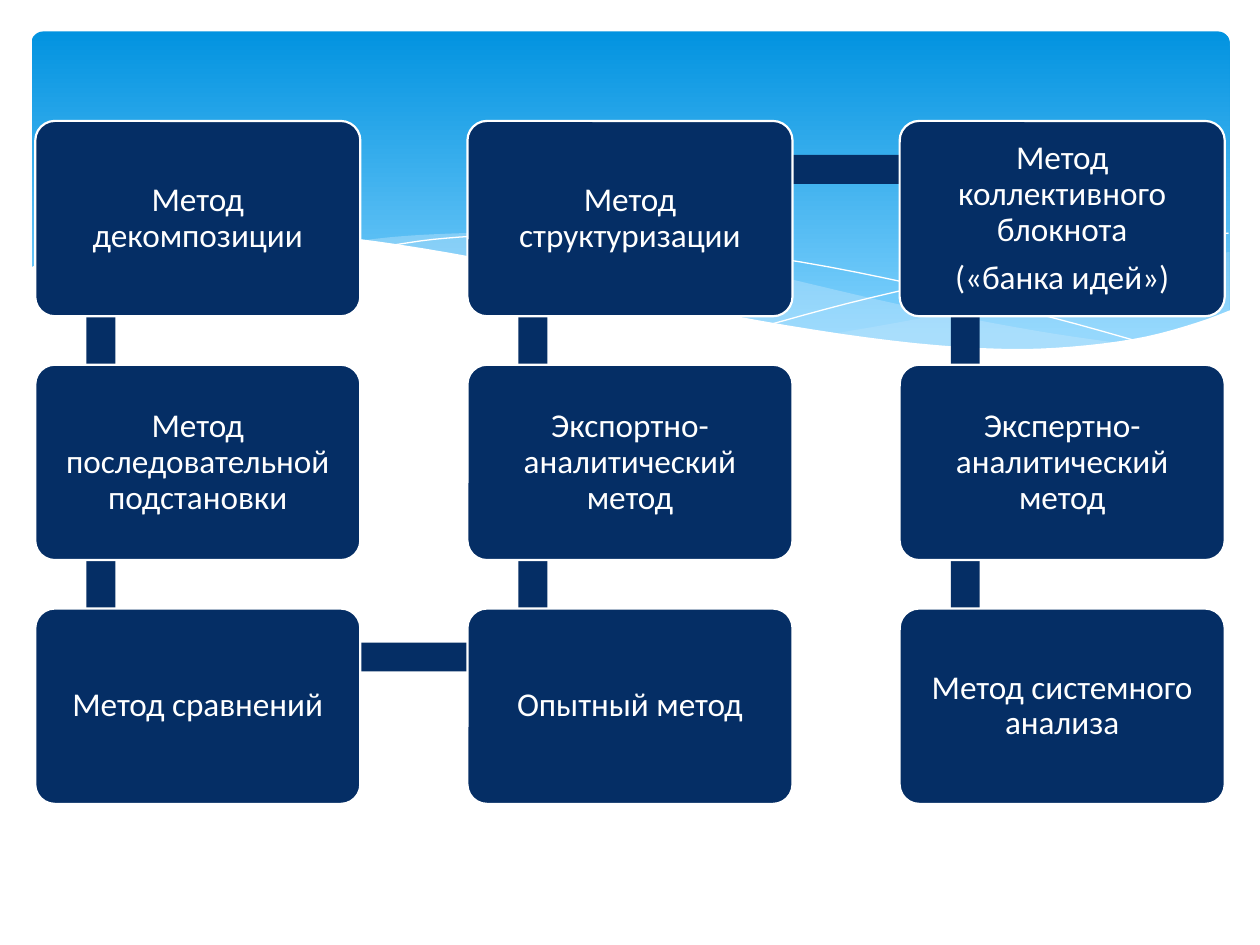
from lxml import etree
from pptx import Presentation
from pptx.dml.color import RGBColor
from pptx.enum.shapes import MSO_SHAPE
from pptx.enum.text import MSO_ANCHOR, PP_ALIGN
from pptx.oxml.ns import qn
from pptx.util import Inches, Pt

RECTANGLE, ROUNDED = MSO_SHAPE.RECTANGLE, MSO_SHAPE.ROUNDED_RECTANGLE
MIDDLE, CENTER = MSO_ANCHOR.MIDDLE, PP_ALIGN.CENTER

COLORS = {
    "navy": "052E65",
    "white": "FFFFFF",
    "sky_top": "0293E0",
    "sky_bottom": "83D3FE",
    "wave": "C6E7FC",
}

FRAME_FORMAT = {
    "word_wrap": True,
    "vertical_anchor": MIDDLE,
    "margin_left": Inches(0.13),
    "margin_right": Inches(0.13),
    "margin_top": Inches(0.13),
    "margin_bottom": Inches(0.13),
}
PARAGRAPH_FORMAT = {"alignment": CENTER, "line_spacing": 0.9, "space_before": Pt(0)}
FONT_FORMAT = {"name": "Calibri", "size": Pt(19)}
PARAGRAPH_GAP = Pt(6.65)

BOX_WIDTH, BOX_HEIGHT = 2.58, 1.55
LEFT, TOP = 0.28, 0.96
COLUMN_STEP, ROW_STEP = 3.43, 1.935
BAR_THICKNESS, BAR_DOWN, BAR_ACROSS = 0.23, 1.92, 3.42

METHODS = [
    ["Метод декомпозиции"],
    ["Метод последовательной подстановки"],
    ["Метод сравнений"],
    ["Опытный метод"],
    ["Экспортно-аналитический метод"],
    ["Метод структуризации"],
    ["Метод коллективного блокнота", "(«банка идей»)"],
    ["Экспертно- аналитический метод"],
    ["Метод системного анализа"],
]
ROWS = 3

RIGHT_WAVE = [
    [(9.76, 2), (9.48, 2.04), (9.06, 2.13), (8.61, 2.23), (8.05, 2.37), (7.29, 2.53), (6.61, 2.65)],
    [(6.61, 2.65), (7.05, 2.71), (7.57, 2.76), (8.03, 2.78), (8.44, 2.77), (8.81, 2.73),
     (9.21, 2.65), (9.49, 2.57), (9.76, 2.47)],
]
MIDDLE_WAVE = [
    [(8.93, 2.73), (8.37, 2.65), (7.75, 2.54), (7.06, 2.4), (6.29, 2.22), (5.69, 2.08),
     (5.14, 1.98), (4.65, 1.91), (4.2, 1.87), (3.8, 1.85), (3.44, 1.86), (3.13, 1.88), (2.86, 1.91)],
    [(2.86, 1.91), (3.42, 1.99), (4.04, 2.11), (4.49, 2.22), (5.3, 2.4), (6.01, 2.55),
     (6.65, 2.66), (7.22, 2.74), (7.73, 2.77), (8.18, 2.78), (8.57, 2.77), (8.93, 2.73)],
]
FALLING_LINE = [
    [(3.09, 1.95), (3.44, 1.9), (3.87, 1.87), (4.33, 1.87), (4.89, 1.9), (5.56, 1.97),
     (6.36, 2.08), (7.27, 2.26), (8.31, 2.51), (9.07, 2.72)],
]
RISING_LINE = [
    [(6.13, 2.57), (6.72, 2.41), (7.48, 2.23), (8.06, 2.1), (8.66, 1.99), (9.24, 1.9), (9.75, 1.85)],
]
WHITE_WAVE = [
    [(9.77, 2.46), (9.5, 2.56), (9.1, 2.67), (8.63, 2.74), (8.09, 2.77), (7.44, 2.74),
     (6.68, 2.65), (5.79, 2.5), (5.03, 2.33), (4.47, 2.2), (3.91, 2.07), (3.16, 1.94),
     (2.5, 1.86), (1.93, 1.84), (1.46, 1.85), (1.06, 1.89), (0.76, 1.95), (0.46, 2.03), (0.23, 2.13)],
    [(0.23, 3.29), (9.77, 3.29)],
]


def apply_format(target, values):
    """Set every attribute named in values on the target."""
    for name, value in values.items():
        setattr(target, name, value)


def rgb(name):
    """Return a named colour."""
    return RGBColor.from_string(COLORS[name])


def fill_solid(shape, color, opacity=100):
    """Fill a shape with one colour at an opacity in percent."""
    shape.fill.solid()
    shape.fill.fore_color.rgb = rgb(color)
    if opacity < 100:
        for element in shape.fill._xPr.iter(qn("a:srgbClr")):
            etree.SubElement(element, qn("a:alpha")).set("val", str(opacity * 1000))


def set_line(shape, color=None, width=0):
    """Outline a shape, or remove its outline when no colour is given."""
    if color is None:
        shape.line.fill.background()
    else:
        shape.line.color.rgb = rgb(color)
        shape.line.width = Pt(width)


def smooth(knots, steps=4):
    """Return points on a Catmull-Rom curve through the knots."""
    padded = [knots[0], *knots, knots[-1]]
    points = [knots[0]]
    for a, b, c, d in zip(padded, padded[1:], padded[2:], padded[3:]):
        for step in range(1, steps + 1):
            t = step / steps
            points.append(tuple(
                (2 * q + (r - p) * t + (2 * p - 5 * q + 4 * r - s) * t ** 2
                 + (3 * q - p - 3 * r + s) * t ** 3) / 2
                for p, q, r, s in zip(a, b, c, d)
            ))
    return points


def add_curves(slide, curves, closed):
    """Add one freeform that runs along the given curves."""
    points = [(Inches(x), Inches(y)) for curve in curves for x, y in smooth(curve)]
    builder = slide.shapes.build_freeform(*points[0])
    builder.add_line_segments(points[1:], close=closed)
    shape = builder.convert_to_shape()
    shape.shadow.inherit = False
    return shape


def add_wave(slide, curves, color, opacity=100):
    """Add a filled wave."""
    wave = add_curves(slide, curves, True)
    fill_solid(wave, color, opacity)
    set_line(wave)


def add_wave_line(slide, curves):
    """Add a white hairline curve."""
    curve = add_curves(slide, curves, False)
    curve.fill.background()
    set_line(curve, "white")


def add_block(slide, kind, left, top, width, height):
    """Add a preset shape without shadow or outline."""
    shape = slide.shapes.add_shape(kind, Inches(left), Inches(top), Inches(width), Inches(height))
    shape.shadow.inherit = False
    set_line(shape)
    return shape


def add_sky(slide):
    """Add the gradient panel behind the waves."""
    sky = add_block(slide, ROUNDED, 0.25, 0.25, 9.51, 2.7)
    sky.adjustments[0] = 0.034
    sky.fill.gradient()
    sky.fill.gradient_angle = 270
    for stop, color, position in zip(sky.fill.gradient_stops, ("sky_top", "sky_bottom"), (0, 0.9)):
        stop.color.rgb = rgb(color)
        stop.position = position


def add_bar(slide, left, top, length, rotation=0):
    """Add a bar that links two method boxes."""
    bar = add_block(slide, RECTANGLE, left, top, length, BAR_THICKNESS)
    bar.rotation = rotation
    fill_solid(bar, "navy")


def add_method(slide, left, top, lines):
    """Add a rounded method box with one paragraph per line."""
    box = add_block(slide, ROUNDED, left, top, BOX_WIDTH, BOX_HEIGHT)
    box.adjustments[0] = 0.1
    fill_solid(box, "navy")
    set_line(box, "white", 1.25)
    frame = box.text_frame
    apply_format(frame, FRAME_FORMAT)
    for index, line in enumerate(lines):
        paragraph = frame.add_paragraph() if index else frame.paragraphs[0]
        paragraph.text = line
        apply_format(paragraph, PARAGRAPH_FORMAT)
        paragraph.space_after = PARAGRAPH_GAP
        apply_format(paragraph.font, FONT_FORMAT)
        paragraph.font.color.rgb = rgb("white")


def add_snake(slide):
    """Lay the methods down and up the columns, each linked to the next."""
    for index, lines in enumerate(METHODS):
        column, step = divmod(index, ROWS)
        upward = column % 2 == 1
        row = ROWS - 1 - step if upward else step
        left, top = LEFT + column * COLUMN_STEP, TOP + row * ROW_STEP
        if step < ROWS - 1:
            upper_top = top - ROW_STEP if upward else top
            add_bar(slide, left - 0.44, upper_top + 1.23, BAR_DOWN, 270 if upward else 90)
        elif index < len(METHODS) - 1:
            add_bar(slide, left + 0.53, top + 0.27, BAR_ACROSS)
        add_method(slide, left, top, lines)


def main():
    """Build and save the slide."""
    presentation = Presentation()
    presentation.slide_width, presentation.slide_height = Inches(10), Inches(7.5)
    slide = presentation.slides.add_slide(presentation.slide_layouts[6])
    add_sky(slide)
    add_wave(slide, RIGHT_WAVE, "wave", 29)
    add_wave(slide, MIDDLE_WAVE, "wave", 40)
    add_wave_line(slide, FALLING_LINE)
    add_wave_line(slide, RISING_LINE)
    add_wave(slide, WHITE_WAVE, "white")
    add_snake(slide)
    presentation.save("out.pptx")


if __name__ == "__main__":
    main()
